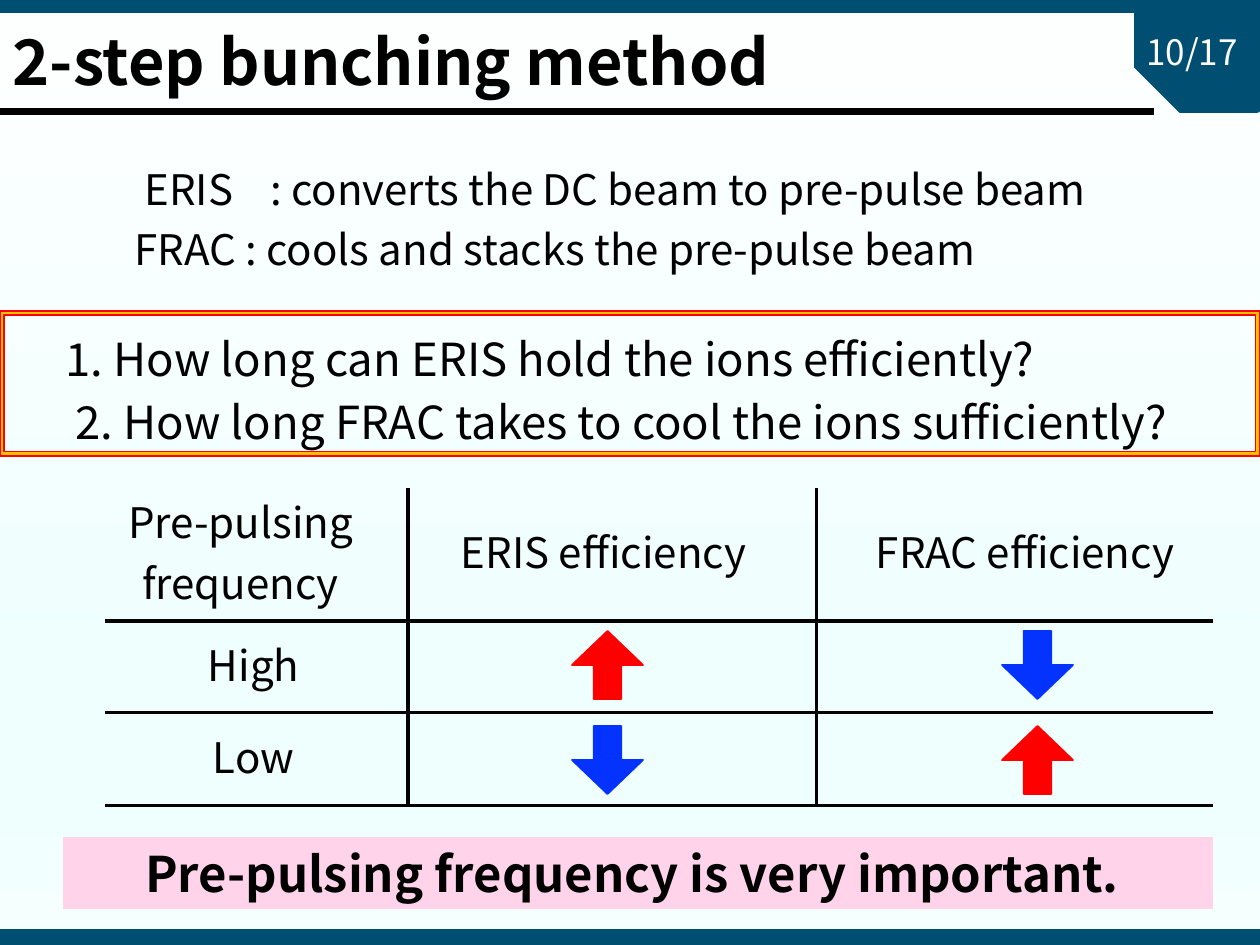
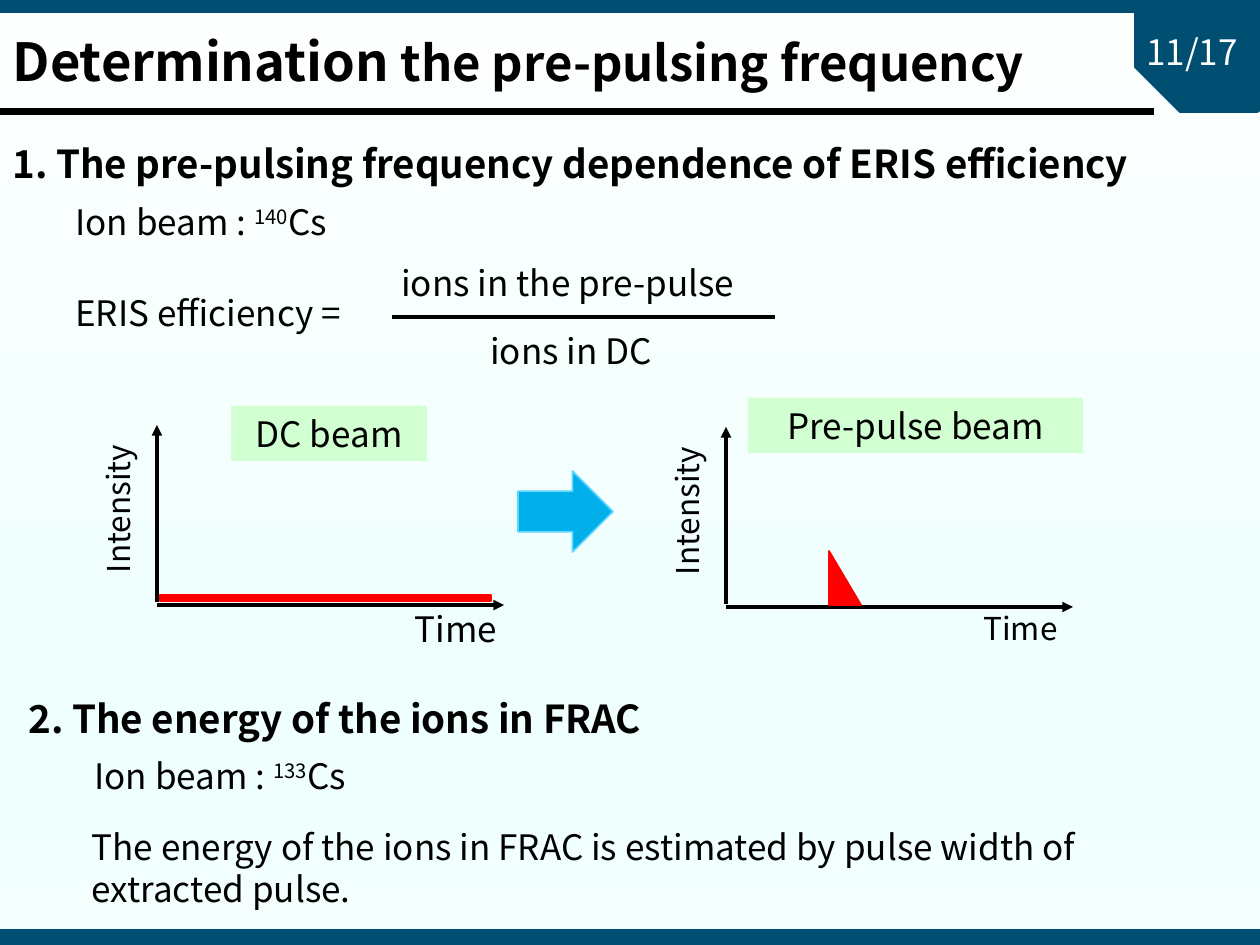
from dataclasses import dataclass

from lxml.etree import SubElement
from pptx import Presentation
from pptx.dml.color import RGBColor
from pptx.enum.shapes import MSO_CONNECTOR, MSO_SHAPE
from pptx.enum.text import MSO_ANCHOR, MSO_AUTO_SIZE, PP_ALIGN
from pptx.oxml import parse_xml
from pptx.oxml.ns import nsdecls, qn
from pptx.util import Emu, Pt


@dataclass(frozen=True)
class Theme:
    """Colours, font and type sizes of the deck."""
    font: str = "Noto Sans CJK JP"
    black: str = "000000"
    white: str = "FFFFFF"
    navy: str = "004F72"
    red: str = "FF0000"
    blue: str = "0432FF"
    gold: str = "FFC000"
    pink: str = "FFD4EB"
    green: str = "D1FFD1"
    sky: str = "00AEEA"
    pale: str = "5FD6FF"
    wash: tuple = ((0, "FDFFFF"), (74, "EEFFFE"), (83, "EEFFFE"), (100, "F4FFFE"))
    title: int = 36
    long: int = 30
    tail: int = 28
    claim: int = 28
    ask: int = 26
    lead: int = 24
    head: int = 22
    text: int = 20
    small: int = 18


T = Theme()


def px(count):
    """Turn whole pixels into EMU."""
    return Emu(round(count * 914400 / 126))


def rgb(code):
    """Make a colour from its hex code."""
    return RGBColor.from_string(code)


def write(frame, *lines, size=T.text, color=T.black, bold=False, align="left",
          anchor="top", pitch=None, gap=0, step=0, shift=0, tab=0):
    """Fill a text frame; a line is a string or a list of (text, format) runs."""
    frame.word_wrap = True
    frame.auto_size = MSO_AUTO_SIZE.NONE
    frame.vertical_anchor = getattr(MSO_ANCHOR, anchor.upper())
    if shift:
        frame.margin_right += px(2 * shift)
    for row, line in enumerate(lines):
        para = frame.add_paragraph() if row else frame.paragraphs[0]
        para.alignment = getattr(PP_ALIGN, align.upper())
        para.space_before = Pt(gap if row else 0)
        if pitch:
            para.line_spacing = pitch
        props = para._p.get_or_add_pPr()
        props.set("marL", str(px(step * row)))
        props.set("indent", "0")
        SubElement(props, qn("a:buNone"))
        if tab:
            stops = SubElement(props, qn("a:tabLst"))
            SubElement(stops, qn("a:tab"), pos=str(px(tab)), algn="l")
        for text, style in [(line, {})] if isinstance(line, str) else line:
            run = para.add_run()
            run.text = text
            font = run.font
            font.name, font.bold = T.font, bold
            font.size = Pt(style.get("size", size))
            font.color.rgb = rgb(color)
            if "base" in style:
                run._r.get_or_add_rPr().set("baseline", str(style["base"] * 1000))


def place(shape, left, top, width, height):
    """Move and size a placeholder."""
    shape.left, shape.top = px(left), px(top)
    shape.width, shape.height = px(width), px(height)
    return shape.text_frame


def label(slide, left, top, width, height, *lines, turn=0, **style):
    """Add a text box."""
    box = slide.shapes.add_textbox(px(left), px(top), px(width), px(height))
    box.rotation = turn
    write(box.text_frame, *lines, **style)


def block(slide, kind, left, top, width, height, fill, line=None, turn=0, adjust=()):
    """Add a filled preset shape."""
    shape = slide.shapes.add_shape(kind, px(left), px(top), px(width), px(height))
    shape.shadow.inherit = False
    shape.rotation = turn
    shape.fill.solid()
    shape.fill.fore_color.rgb = rgb(fill)
    if line:
        shape.line.color.rgb = rgb(line)
        shape.line.width = Pt(1)
    else:
        shape.line.fill.background()
    for spot, value in enumerate(adjust):
        shape.adjustments[spot] = value
    return shape


def banner(slide, left, top, width, height, text, fill, **style):
    """Add a coloured box with centred text."""
    shape = block(slide, MSO_SHAPE.RECTANGLE, left, top, width, height, fill)
    write(shape.text_frame, text, align="center", anchor="middle", **style)


def rule(slide, start, end, width=2, arrow=False):
    """Draw a straight black line, with an arrowhead at its end on request."""
    line = slide.shapes.add_connector(
        MSO_CONNECTOR.STRAIGHT, *(px(part) for part in (*start, *end)))
    line.line.color.rgb = rgb(T.black)
    line.line.width = Pt(width)
    if arrow:
        SubElement(line.line._get_or_add_ln(), qn("a:tailEnd"), type="triangle")
    SubElement(line.element.spPr, qn("a:effectLst"))


def wash(master):
    """Give the master its gradient background."""
    fill = master.background.fill
    fill.gradient()
    fill.gradient_angle = 270
    stops = next(master.element.iter(qn("a:gsLst")))
    for stop in list(stops):
        stops.remove(stop)
    for spot, code in T.wash:
        stop = SubElement(stops, qn("a:gs"), pos=str(spot * 1000))
        SubElement(stop, qn("a:srgbClr"), val=code)


def page(deck, number, title):
    """Add a slide with title, bands, rule and page corner."""
    slide = deck.slides.add_slide(deck.slide_layouts[1])
    write(place(slide.shapes.title, 0, 0, 1140, 130), title,
          size=T.title, bold=True, anchor="middle", pitch=0.9)
    for top, height in ((0, 12), (930, 15)):
        block(slide, MSO_SHAPE.RECTANGLE, 0, top, 1260, height, T.navy, T.navy)
    block(slide, MSO_SHAPE.SNIP_ROUND_RECTANGLE, 1135, 0, 125, 112,
          T.navy, T.navy, turn=180, adjust=(0.03, 0.4))
    label(slide, 1134, 24, 126, 55, f"{number}/17", color=T.white)
    rule(slide, (0, 112), (1154, 112), width=4)
    return slide


def edge(cell, sides):
    """Draw the named sides of a cell and hide the others."""
    props = cell._tc.get_or_add_tcPr()
    for spot, side in enumerate("LRTB"):
        paint = (f'<a:solidFill><a:srgbClr val="{T.black}"/></a:solidFill>'
                 if side in sides else "<a:noFill/>")
        props.insert(spot, parse_xml(
            f'<a:ln{side} {nsdecls("a")} w="{Pt(2)}">{paint}</a:ln{side}>'))


def grid(slide, left, top, widths, heights, rows, shifts):
    """Add a ruled table whose columns are nudged sideways by shifts."""
    table = slide.shapes.add_table(
        len(heights), len(widths), px(left), px(top),
        px(sum(widths)), px(sum(heights))).table
    table.first_row = table.horz_banding = False
    for col, width in enumerate(widths):
        table.columns[col].width = px(width)
    for row, height in enumerate(heights):
        table.rows[row].height = px(height)
        for col, text in enumerate(rows[row]):
            cell = table.cell(row, col)
            cell.fill.background()
            sides = "B" + "T" * (row > 0) + "L" * (col > 0)
            edge(cell, sides + "R" * (col < len(widths) - 1))
            nudge = shifts[row][col]
            cell.margin_left = px(max(0, 2 * nudge))
            cell.margin_right = px(max(0, -2 * nudge))
            cell.margin_top, cell.margin_bottom = 0, px(8)
            write(cell.text_frame, text, size=T.lead, align="center")
            cell.vertical_anchor = MSO_ANCHOR.MIDDLE


def plot(slide, left, base, size):
    """Draw a pair of axes for intensity against time."""
    label(slide, left - 137, base - 142, 195, 50, "Intensity", size=T.small, turn=270)
    rule(slide, (left, base - 3), (left, base - 180), arrow=True)
    rule(slide, (left, base), (left + 347, base), arrow=True)
    label(slide, left + 245, base - 4, 131, 55, "Time", size=size)


def beam(slide, left, top, mass):
    """Name the caesium isotope of an ion beam."""
    label(slide, left, top, 393, 55,
          [("Ion beam : ", {}), (mass, {"base": 30}), ("Cs", {})])


def method(deck):
    """Build the slide on the bunching method."""
    slide = page(deck, 10, "2-step bunching method")
    label(slide, 132, 157, 1040, 63,
          "ERIS\t: converts the DC beam to pre-pulse beam", size=T.lead, tab=117)
    label(slide, 122, 217, 1040, 63,
          "FRAC : cools and stacks the pre-pulse beam", size=T.lead)
    block(slide, MSO_SHAPE.FRAME, 0, 311, 1260, 145, T.gold, T.red, adjust=(0.03,))
    write(place(slide.placeholders[1], 53, 325, 1190, 130),
          "1. How long can ERIS hold the ions efficiently?",
          "2. How long FRAC takes to cool the ions sufficiently?",
          size=T.ask, gap=4.5, step=10)
    grid(slide, 105, 488, (303, 409, 396), (133, 92, 93),
         (("Pre-pulsing frequency", "ERIS efficiency", "FRAC efficiency"),
          ("High", "", ""), ("Low", "", "")),
         ((-16, -9, 10), (-3, 0, 0), (-3, 0, 0)))
    for row, top in enumerate((631, 726)):
        for col, left in enumerate((572, 1002)):
            color, turn = (T.red, 180) if row == col else (T.blue, 0)
            block(slide, MSO_SHAPE.DOWN_ARROW, left, top, 71, 68,
                  color, color, turn=turn, adjust=(0.39, 0.5))
    banner(slide, 63, 837, 1150, 72, "Pre-pulsing frequency is very important.",
           T.pink, size=T.claim, bold=True, shift=6)


def study(deck):
    """Build the slide on finding the frequency."""
    slide = page(deck, 11, [("Determination", {"size": T.long}),
                            (" the pre-pulsing frequency", {"size": T.tail})])
    label(slide, 0, 134, 1260, 59,
          "1. The pre-pulsing frequency dependence of ERIS efficiency",
          size=T.head, bold=True)
    beam(slide, 63, 194, "140")
    label(slide, 63, 285, 393, 55, "ERIS efficiency =")
    label(slide, 389, 255, 415, 55, "ions in the pre-pulse")
    rule(slide, (392, 317), (775, 317))
    label(slide, 478, 323, 242, 55, "ions in DC")

    plot(slide, 157, 605, T.text)
    banner(slide, 231, 406, 196, 55, "DC beam", T.green)
    block(slide, MSO_SHAPE.RECTANGLE, 160, 595, 331, 6, T.red, T.red)
    block(slide, MSO_SHAPE.DOWN_ARROW, 525, 464, 81, 95, T.sky, T.pale, turn=270)
    plot(slide, 726, 607, T.small)
    banner(slide, 748, 398, 335, 55, "Pre-pulse beam", T.green)
    block(slide, MSO_SHAPE.RIGHT_TRIANGLE, 829, 551, 32, 54, T.red, T.red)

    label(slide, 16, 689, 741, 59, "2. The energy of the ions in FRAC",
          size=T.head, bold=True)
    beam(slide, 82, 748, "133")
    write(place(slide.placeholders[1], 79, 819, 1089, 97),
          "The energy of the ions in FRAC is estimated by pulse width of extracted pulse.")


def main():
    """Build and save the deck."""
    deck = Presentation()
    deck.slide_width, deck.slide_height = px(1260), px(945)
    wash(deck.slide_master)
    method(deck)
    study(deck)
    deck.save("out.pptx")


if __name__ == "__main__":
    main()
